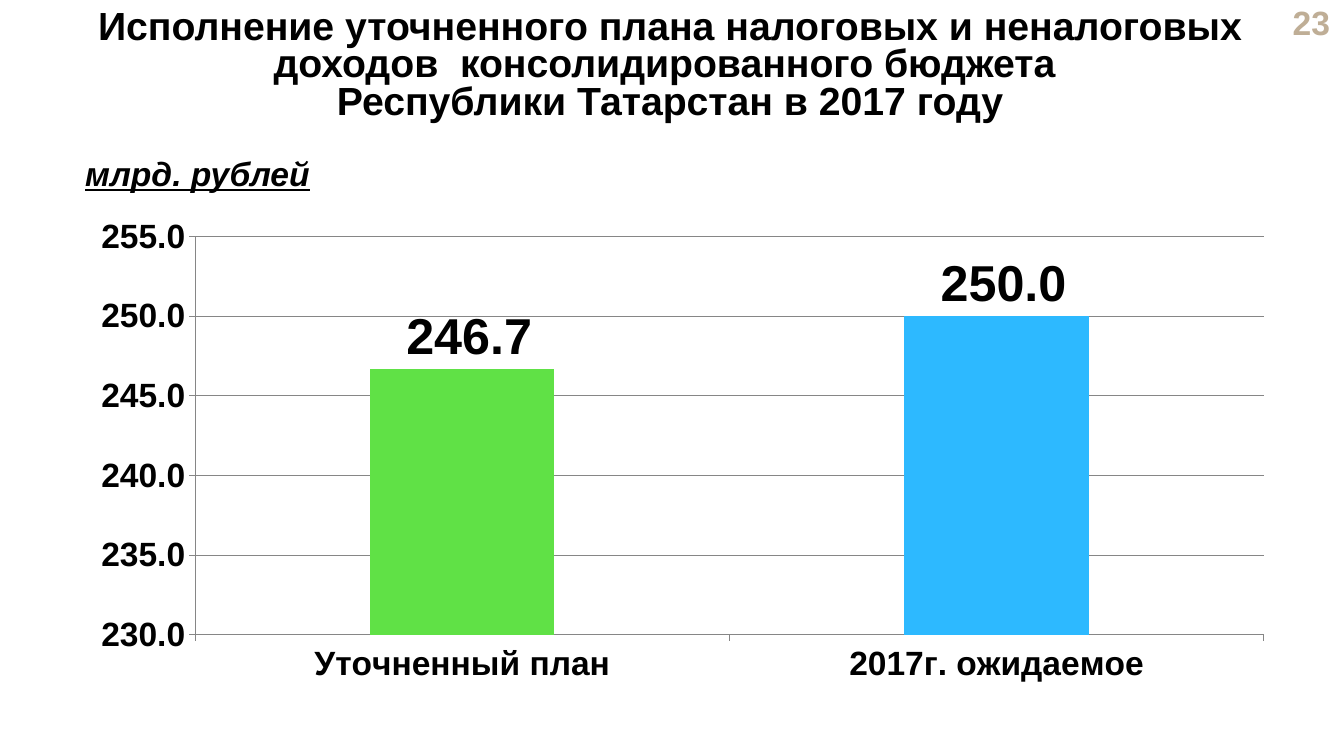
from pptx import Presentation
from pptx import util as u
from pptx.chart.data import CategoryChartData
from pptx.dml.color import RGBColor
from pptx.enum import chart as charts, text
from pptx.oxml import parse_xml
from pptx.oxml.ns import nsdecls

EMU_PER_PX = 914400 / 100.8
NUMBER_FORMAT = r"#\ ##0.0"


def px(length):
    return u.Emu(round(length * EMU_PER_PX))


def colour(value):
    return RGBColor.from_string(value)


class SlideBuilder:
    font_name = "Arial"
    ink = "000000"
    grid = "868686"

    def __init__(self, deck):
        self.page = deck.slides.add_slide(deck.slide_layouts[5])

    def style(self, font, size, hex_colour=None):
        font.name = self.font_name
        font.size = u.Pt(size)
        font.bold = True
        font.color.rgb = colour(hex_colour or self.ink)

    def fill_text(self, box, words, size, align, anchor, hex_colour=None):
        frame = box.text_frame
        frame.text = words
        frame.auto_size = text.MSO_AUTO_SIZE.NONE
        frame.vertical_anchor = anchor
        para = frame.paragraphs[0]
        para.alignment = align
        self.style(para.font, size, hex_colour)
        return para

    def title(self, words, left, top, width, height):
        box = self.page.shapes.title
        box.left, box.top, box.width, box.height = map(px, (left, top, width, height))
        para = self.fill_text(box, words, 28, text.PP_ALIGN.CENTER, text.MSO_ANCHOR.TOP)
        para.line_spacing = 0.8
        para.space_before = u.Pt(0)

    def label(self, words, left, top, width, height, align, anchor, hex_colour=None):
        box = self.page.shapes.add_textbox(*map(px, (left, top, width, height)))
        box.text_frame.word_wrap = False
        return self.fill_text(box, words, 24, align, anchor, hex_colour)

    def axis(self, axis):
        self.style(axis.tick_labels.font, 24)
        axis.format.line.color.rgb = colour(self.grid)
        axis.major_tick_mark = charts.XL_TICK_MARK.OUTSIDE
        axis.minor_tick_mark = charts.XL_TICK_MARK.NONE

    def column_chart(self, columns, left, top, width, height):
        data = CategoryChartData(number_format=NUMBER_FORMAT)
        data.categories = [name for name, _, _ in columns]
        data.add_series("Series 1", [value for _, value, _ in columns])
        chart = self.page.shapes.add_chart(
            charts.XL_CHART_TYPE.COLUMN_CLUSTERED,
            *map(px, (left, top, width, height)), data).chart
        chart.has_legend = False
        chart.has_title = False
        chart.font.name = "Calibri"
        chart.font.size = u.Pt(18)
        chart.font.color.rgb = colour(self.ink)

        # Axes and gridlines
        self.axis(chart.category_axis)
        values = chart.value_axis
        self.axis(values)
        values.minimum_scale, values.maximum_scale, values.major_unit = 230, 255, 5
        values.tick_labels.number_format = NUMBER_FORMAT
        values.tick_labels.number_format_is_linked = False
        values.major_gridlines.format.line.color.rgb = colour(self.grid)

        # Columns and their values
        plot = chart.plots[0]
        plot.gap_width = 190
        plot.vary_by_categories = False
        series = plot.series[0]
        for index, (_, _, fill) in enumerate(columns):
            point_fill = series.points[index].format.fill
            point_fill.solid()
            point_fill.fore_color.rgb = colour(fill)
        labels = series.data_labels
        labels.show_value = True
        labels.position = charts.XL_LABEL_POSITION.OUTSIDE_END
        labels.number_format = NUMBER_FORMAT
        labels.number_format_is_linked = False
        self.style(labels.font, 36)
        return chart

    def place_plot(self, chart, x, y, w, h):
        area = chart.plots[0]._element.getparent()
        for layout in area.findall("{*}layout"):
            area.remove(layout)
        sizes = "".join(f'<c:{key} val="{value}"/>'
                        for key, value in zip("xywh", (x, y, w, h)))
        area.insert(0, parse_xml(
            f'<c:layout {nsdecls("c")}><c:manualLayout><c:layoutTarget val="inner"/>'
            '<c:xMode val="edge"/><c:yMode val="edge"/>'
            f'{sizes}</c:manualLayout></c:layout>'))


def main():
    deck = Presentation()
    deck.slide_width, deck.slide_height = px(1344), px(756)
    slide = SlideBuilder(deck)

    # Page number and heading
    slide.label("23", 1254, 5, 86, 34, text.PP_ALIGN.RIGHT,
                text.MSO_ANCHOR.MIDDLE, "BFAE96")
    slide.title("Исполнение уточненного плана налоговых и неналоговых "
                "доходов  консолидированного бюджета \v"
                "Республики Татарстан в 2017 году", 76, 5, 1188, 123)

    # Revenue chart
    columns = [("Уточненный план", 246.7, "60E146"),
               ("2017г. ожидаемое", 250.0, "2DB9FF")]
    chart = slide.column_chart(columns, 92, 148, 1173, 541)
    slide.place_plot(chart, 0.086, 0.164, 0.913, 0.736)

    # Unit of measure
    unit = slide.label("млрд. рублей", 76, 148, 243, 39,
                       text.PP_ALIGN.CENTER, text.MSO_ANCHOR.TOP)
    unit.font.italic = True
    unit.font.underline = True

    deck.save("out.pptx")


if __name__ == "__main__":
    main()
